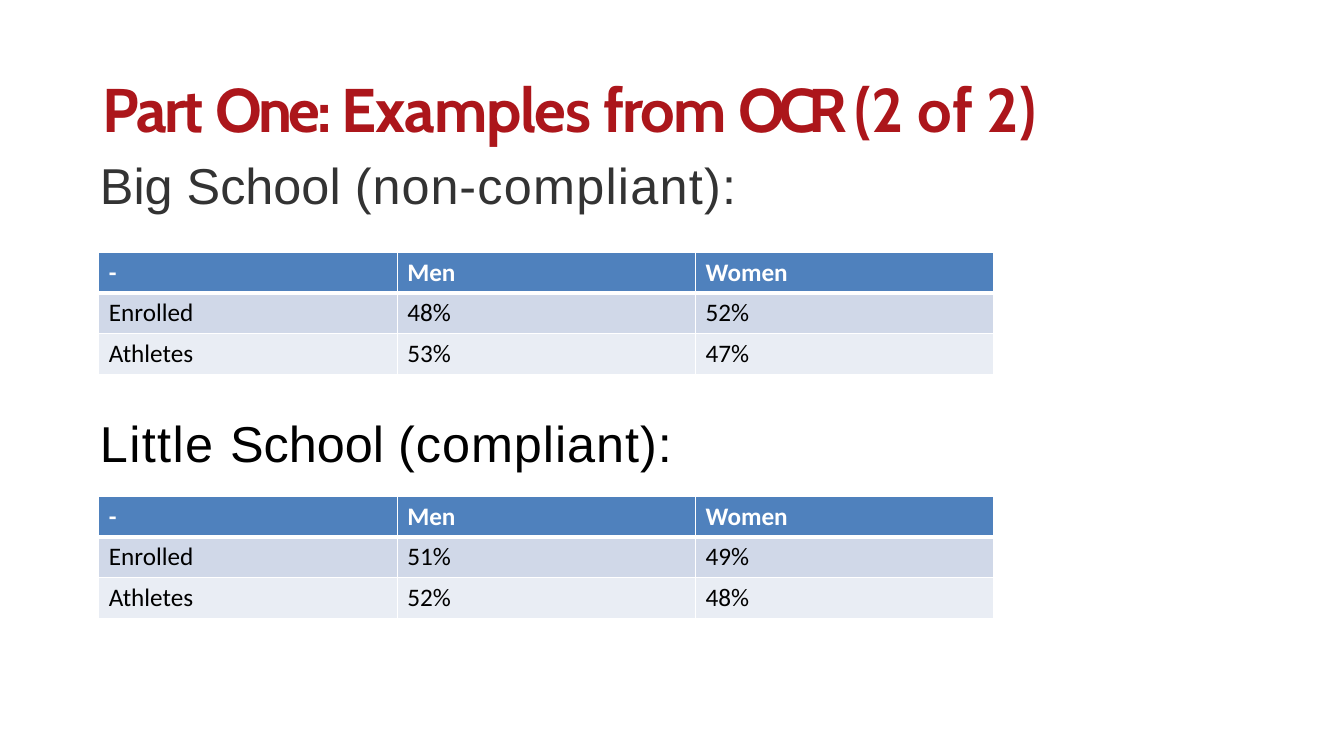
from dataclasses import dataclass

from lxml.etree import SubElement
from pptx import Presentation
from pptx.dml.color import RGBColor
from pptx.enum.text import MSO_ANCHOR
from pptx.oxml.ns import qn
from pptx.slide import Slide
from pptx.table import _Cell
from pptx.util import Cm, Pt

RED = RGBColor(0xAC, 0x16, 0x1B)
GRAY = RGBColor(0x33, 0x33, 0x33)
BLACK = RGBColor(0x00, 0x00, 0x00)
WHITE = RGBColor(0xFF, 0xFF, 0xFF)
HEADER_BLUE = RGBColor(0x4F, 0x81, 0xBD)
BAND_DARK = RGBColor(0xD0, 0xD8, 0xE8)
BAND_LIGHT = RGBColor(0xE9, 0xED, 0xF4)
ROW_FILLS = (HEADER_BLUE, BAND_DARK, BAND_LIGHT)

LEFT = 2.49
COLUMN_WIDTH = 7.52
ROW_HEIGHT = 1.03


@dataclass
class Line:
    """One paragraph; each piece is its text and its letter spacing in points."""
    pieces: list[tuple[str, float]]
    font: str
    size: float
    color: RGBColor
    bold: bool = False
    indent: float = 0.03
    space_before: float = 0


@dataclass
class TextBlock:
    top: float
    width: float
    height: float
    inset_top: float
    lines: list[Line]


@dataclass
class SchoolTable:
    top: float
    enrolled: tuple[str, str]
    athletes: tuple[str, str]


TEXT_BLOCKS = [
    TextBlock(1.45, 26.47, 3.96, 0.35, [
        Line([("Part ", -1.8), ("One: ", -2.5), ("Examples ", -0.9), ("from ", -1.6),
              ("OCR ", -5), ("(2 of ", 0), ("2)", -0.2)],
             "Cabin", 44, RED, bold=True, indent=0.1),
        Line([("Big School ", 0), ("(non-", 0.7), ("compliant):", 0.9)],
             "Arial", 36, GRAY, space_before=6.3),
    ]),
    TextBlock(10.36, 14.6, 1.6, 0.03, [
        Line([("Little ", 1), ("School ", 0), ("(compliant):", 0.7)], "Arial", 36, BLACK),
    ]),
]
TABLES = [
    SchoolTable(6.35, ("48%", "52%"), ("53%", "47%")),
    SchoolTable(12.5, ("51%", "49%"), ("52%", "48%")),
]


def add_text_block(s: Slide, block: TextBlock) -> None:
    sp = s.shapes.add_textbox(Cm(LEFT), Cm(block.top), Cm(block.width), Cm(block.height))
    tf = sp.text_frame
    tf.word_wrap = True
    tf.vertical_anchor = MSO_ANCHOR.TOP
    tf.margin_left = tf.margin_right = tf.margin_bottom = 0
    tf.margin_top = Cm(block.inset_top)
    for i, line in enumerate(block.lines):
        p = tf.add_paragraph() if i else tf.paragraphs[0]
        p._p.get_or_add_pPr().set("marL", str(Cm(line.indent)))
        p.space_before = Pt(line.space_before)
        for text, spacing in line.pieces:
            r = p.add_run()
            r.text = text
            r.font.name = line.font
            r.font.size = Pt(line.size)
            r.font.bold = line.bold
            r.font.color.rgb = line.color
            r._r.get_or_add_rPr().set("spc", str(round(spacing * 100)))


def set_borders(cell: _Cell, top: float, bottom: float) -> None:
    """Draw white borders, one point wide at the sides; call before filling the cell."""
    tc_pr = cell._tc.get_or_add_tcPr()
    for side, width in (("L", 1), ("R", 1), ("T", top), ("B", bottom)):
        ln = SubElement(tc_pr, qn(f"a:ln{side}"), w=str(Pt(width)))
        fill = SubElement(ln, qn("a:solidFill"))
        SubElement(fill, qn("a:srgbClr"), val=str(WHITE))


def add_school_table(s: Slide, school: SchoolTable) -> None:
    rows = [("-", "Men", "Women"),
            ("Enrolled", *school.enrolled),
            ("Athletes", *school.athletes)]
    table = s.shapes.add_table(3, 3, Cm(LEFT), Cm(school.top),
                               Cm(3 * COLUMN_WIDTH), Cm(3 * ROW_HEIGHT)).table
    for column in table.columns:
        column.width = Cm(COLUMN_WIDTH)
    for i, (values, fill) in enumerate(zip(rows, ROW_FILLS)):
        is_header = i == 0
        table.rows[i].height = Cm(ROW_HEIGHT)
        for j, value in enumerate(values):
            cell = table.cell(i, j)
            set_borders(cell, top=3 if i == 1 else 1, bottom=3 if is_header else 1)
            cell.fill.solid()
            cell.fill.fore_color.rgb = fill
            cell.text_frame.text = value
            font = cell.text_frame.paragraphs[0].runs[0].font
            font.name = "Calibri"
            font.size = Pt(18)
            font.bold = is_header
            font.color.rgb = WHITE if is_header else BLACK


def main() -> None:
    prs = Presentation()
    prs.slide_width, prs.slide_height = Cm(33.87), Cm(19.05)
    s = prs.slides.add_slide(prs.slide_layouts[6])
    for block, school in zip(TEXT_BLOCKS, TABLES):
        add_text_block(s, block)
        add_school_table(s, school)
    prs.save("out.pptx")


if __name__ == "__main__":
    main()
